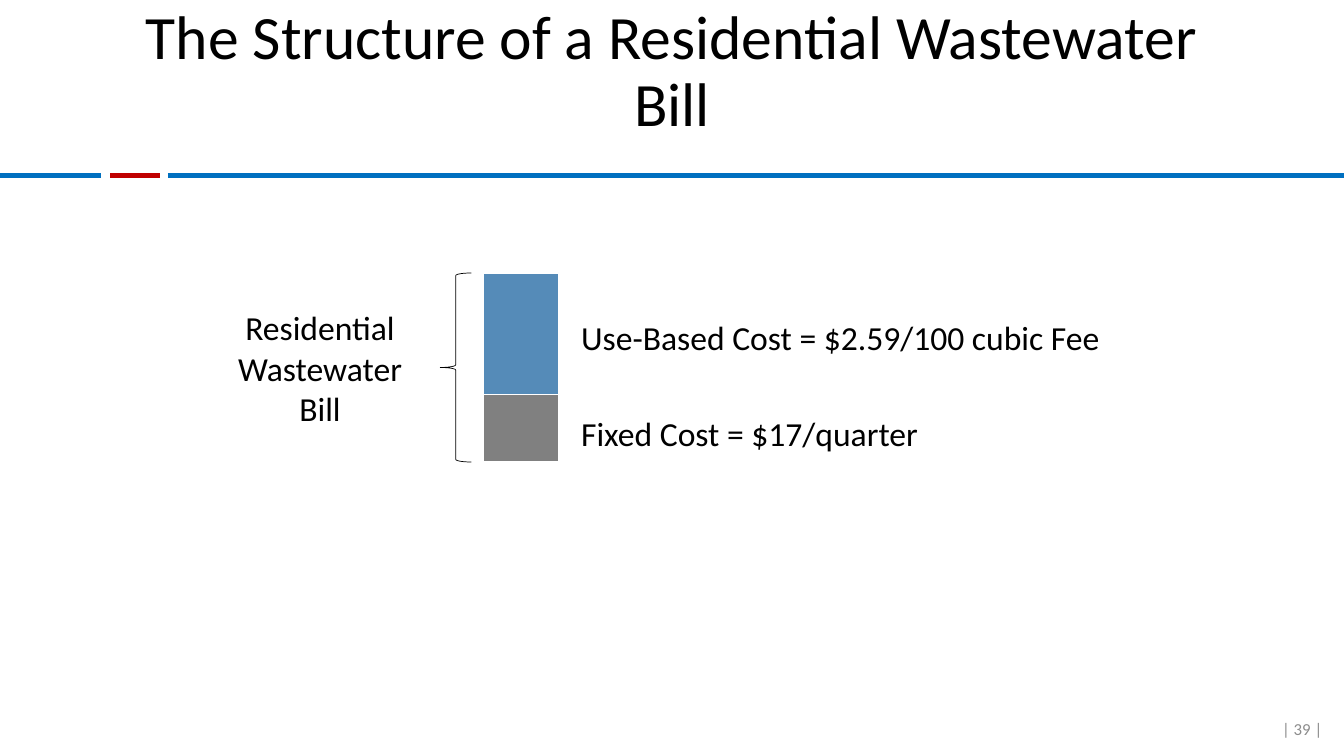
from typing import NamedTuple

from lxml.etree import SubElement
from pptx import Presentation
from pptx.dml.color import RGBColor
from pptx.enum.shapes import MSO_CONNECTOR as Connector, MSO_SHAPE as Preset
from pptx.enum.text import MSO_ANCHOR as Anchor, PP_ALIGN as Align
from pptx.oxml.ns import qn
from pptx.slide import Slide
from pptx.text.text import TextFrame
from pptx.util import Inches, Pt

BLACK = RGBColor(0x00, 0x00, 0x00)
WHITE = RGBColor(0xFF, 0xFF, 0xFF)
BLUE = RGBColor(0x00, 0x70, 0xC0)
RED = RGBColor(0xC0, 0x00, 0x00)
STEEL = RGBColor(0x55, 0x8B, 0xB8)
GREY = RGBColor(0x80, 0x80, 0x80)
PALE_GREY = RGBColor(0x8C, 0x8C, 0x8C)

SLIDE_WIDTH, SLIDE_HEIGHT = Inches(13.33), Inches(7.5)
COLUMNS, ROWS = 160, 90
RULE_ROW = 20.9
BAR_COLUMN, BAR_COLUMNS = 57.5, 9
BAR_TOP = 32.5
COST_COLUMN = 68


class Area(NamedTuple):
    column: float
    row: float
    columns: float
    rows: float


class Rule(NamedTuple):
    start: float
    end: float
    color: RGBColor


class Label(NamedTuple):
    text: str
    area: Area
    size: int = 24
    color: RGBColor = BLACK
    align: Align = Align.LEFT
    anchor: Anchor = Anchor.TOP


class CostPart(NamedTuple):
    rows: float
    color: RGBColor


RULES = [Rule(20, 160, BLUE), Rule(0, 12, BLUE), Rule(13.1, 19.1, RED)]
COST_PARTS = [CostPart(14.5, STEEL), CostPart(8, GREY)]
TITLE = Label("The Structure of a Residential Wastewater Bill",
              Area(11, 0, 138, 17.4), 44, BLACK, Align.CENTER, Anchor.MIDDLE)
LABELS = [
    Label("| 39 |", Area(149, 84.4, 9.6, 4.8), 12, PALE_GREY, Align.RIGHT, Anchor.MIDDLE),
    Label("Use-Based Cost = $2.59/100 cubic Fee", Area(COST_COLUMN, 37.1, 66.7, 6)),
    Label("Fixed Cost = $17/quarter", Area(COST_COLUMN, 48.6, 46.3, 6)),
    Label("Residential Wastewater Bill", Area(25.4, 36, 25.4, 15.7), align=Align.CENTER),
]


def across(columns: float) -> int:
    return round(SLIDE_WIDTH * columns / COLUMNS)


def down(rows: float) -> int:
    return round(SLIDE_HEIGHT * rows / ROWS)


def place(area: Area) -> tuple[int, int, int, int]:
    return across(area.column), down(area.row), across(area.columns), down(area.rows)


def write(frame: TextFrame, label: Label) -> None:
    frame.text = label.text
    frame.word_wrap = True
    frame.vertical_anchor = label.anchor
    paragraph = frame.paragraphs[0]
    paragraph.alignment = label.align
    font = paragraph.runs[0].font
    font.name = "Calibri"
    font.size = Pt(label.size)
    font.color.rgb = label.color


def draw_title(slide: Slide) -> None:
    title = slide.shapes.title
    title.left, title.top, title.width, title.height = place(TITLE.area)
    write(title.text_frame, TITLE)
    title.text_frame.paragraphs[0].line_spacing = 0.9


def draw_rule(slide: Slide, rule: Rule) -> None:
    stroke = slide.shapes.add_connector(
        Connector.STRAIGHT, across(rule.start), down(RULE_ROW),
        across(rule.end), down(RULE_ROW))
    stroke.line.color.rgb = rule.color
    stroke.line.width = Pt(3)
    SubElement(stroke._element.spPr, qn("a:effectLst"))


def draw_label(slide: Slide, label: Label) -> None:
    write(slide.shapes.add_textbox(*place(label.area)).text_frame, label)


def draw_cost_bar(slide: Slide) -> None:
    row = BAR_TOP
    for part in COST_PARTS:
        block = slide.shapes.add_shape(
            Preset.RECTANGLE, *place(Area(BAR_COLUMN, row, BAR_COLUMNS, part.rows)))
        block.shadow.inherit = False
        block.fill.solid()
        block.fill.fore_color.rgb = part.color
        block.line.color.rgb = WHITE
        block.line.width = Pt(1)
        row += part.rows
    brace = slide.shapes.add_shape(
        Preset.LEFT_BRACE, *place(Area(52.4, BAR_TOP, 3.7, row - BAR_TOP)))
    brace.shadow.inherit = False
    brace.fill.background()
    brace.line.color.rgb = BLACK
    brace.line.width = Pt(0.5)


def main() -> None:
    deck = Presentation()
    deck.slide_width, deck.slide_height = SLIDE_WIDTH, SLIDE_HEIGHT
    slide = deck.slides.add_slide(deck.slide_layouts.get_by_name("Title Only"))
    for rule in RULES:
        draw_rule(slide, rule)
    draw_title(slide)
    draw_cost_bar(slide)
    for label in LABELS:
        draw_label(slide, label)
    deck.save("out.pptx")


if __name__ == "__main__":
    main()
